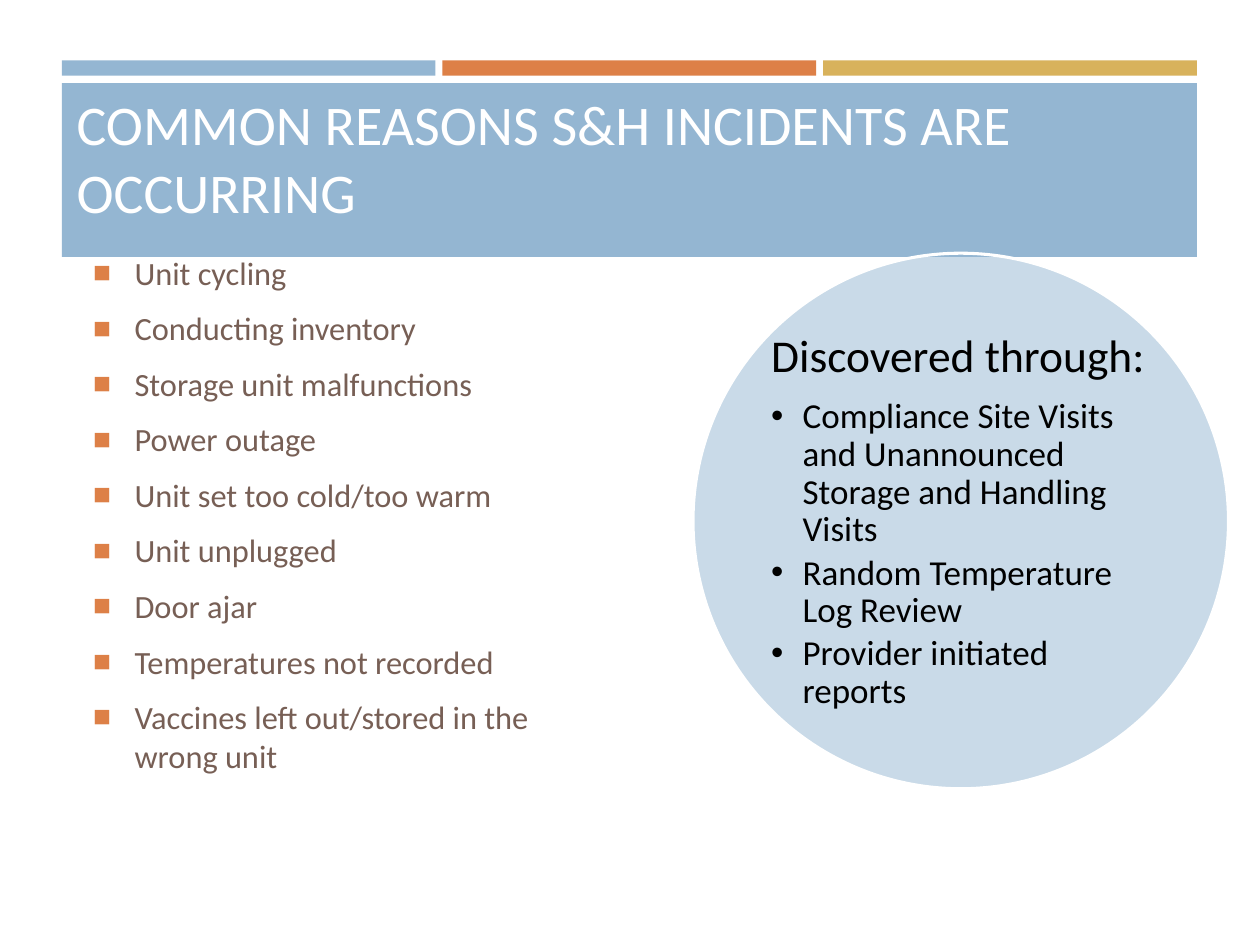
from dataclasses import dataclass

from lxml import etree
from pptx import Presentation
from pptx.dml.color import RGBColor
from pptx.enum.shapes import MSO_SHAPE
from pptx.enum.text import MSO_ANCHOR, PP_ALIGN
from pptx.oxml.ns import qn
from pptx.util import Inches, Pt

RECTANGLE = MSO_SHAPE.RECTANGLE
OVAL = MSO_SHAPE.OVAL
MIDDLE = MSO_ANCHOR.MIDDLE
BOTTOM = MSO_ANCHOR.BOTTOM
LEFT = PP_ALIGN.LEFT


@dataclass(frozen=True)
class Theme:
    font: str = "Calibri"
    bullet_font: str = "Arial"
    blue: str = "94B6D2"
    orange: str = "DD8047"
    gold: str = "D8B25C"
    brown: str = "775F55"
    white: str = "FFFFFF"
    black: str = "000000"
    title_size: float = 32
    reason_size: float = 18.5
    heading_size: float = 26
    source_size: float = 20


theme = Theme()
presentation = Presentation()
presentation.slide_width = Inches(10)
presentation.slide_height = Inches(7.5)
column = presentation.slide_width / 100
row = presentation.slide_height / 100
slide = presentation.slides.add_slide(presentation.slide_layouts[6])


def add_panel(kind, left, top, width, height, color):
    shape = slide.shapes.add_shape(
        kind, int(left * column), int(top * row), int(width * column), int(height * row)
    )
    shape.shadow.inherit = False
    shape.fill.solid()
    shape.fill.fore_color.rgb = RGBColor.from_string(color)
    shape.line.fill.background()
    return shape


def write(text, box, size, color, anchor=MIDDLE, insets=(0.1, 0.05, 0.1, 0.05), bullet=None,
          bullet_color=None, bullet_share=100, indent=0, before=0, after=0, spacing=1.0, frame=None):
    if frame is None:
        left, top, width, height = box
        frame = slide.shapes.add_textbox(
            int(left * column), int(top * row), int(width * column), int(height * row)
        ).text_frame
        frame.word_wrap = True
        frame.vertical_anchor = anchor
        frame.margin_left, frame.margin_top, frame.margin_right, frame.margin_bottom = map(Inches, insets)
        paragraph = frame.paragraphs[0]
        before = 0
    else:
        paragraph = frame.add_paragraph()
    if bullet:
        properties = paragraph._p.get_or_add_pPr()
        properties.set("marL", str(Inches(indent)))
        properties.set("indent", str(-Inches(indent)))
        tint = etree.SubElement(properties, qn("a:buClr"))
        etree.SubElement(tint, qn("a:srgbClr"), val=bullet_color or color)
        etree.SubElement(properties, qn("a:buSzPct"), val=str(bullet_share * 1000))
        etree.SubElement(properties, qn("a:buFont"), typeface=theme.bullet_font)
        etree.SubElement(properties, qn("a:buChar"), char=bullet)
    paragraph.alignment = LEFT
    paragraph.line_spacing = spacing
    paragraph.space_before = Pt(before)
    paragraph.space_after = Pt(after)
    run = paragraph.add_run()
    run.text = text
    run.font.name = theme.font
    run.font.size = Pt(size)
    run.font.color.rgb = RGBColor.from_string(color)
    return frame


band_left, band_width, bar_gap = 4.9, 90.1, 0.55
bar_width = (band_width - 2 * bar_gap) / 3
for index, color in enumerate((theme.blue, theme.orange, theme.gold)):
    add_panel(RECTANGLE, band_left + index * (bar_width + bar_gap), 6.4, bar_width, 1.6, color)
add_panel(RECTANGLE, band_left, 8.8, band_width, 18.4, theme.blue)

write("COMMON REASONS S&H INCIDENTS ARE OCCURRING", (5.1, 10, 90, 14.4),
      theme.title_size, theme.white, anchor=BOTTOM)

reasons = (
    "Unit cycling",
    "Conducting inventory",
    "Storage unit malfunctions",
    "Power outage",
    "Unit set too cold/too warm",
    "Unit unplugged",
    "Door ajar",
    "Temperatures not recorded",
    "Vaccines left out/stored in the wrong unit",
)
reason_frame = None
for reason in reasons:
    reason_frame = write(reason, (6.4, 32.53, 42.6, 52.93), theme.reason_size, theme.brown,
                         insets=(0.1, 0.05, 0.1, 0.74), bullet="■", bullet_color=theme.orange,
                         bullet_share=92, indent=0.33, before=3.5, after=6, frame=reason_frame)

circle = add_panel(OVAL, 55, 26.8, 42.5, 56.67, theme.blue)
circle.line.color.rgb = RGBColor.from_string(theme.white)
circle.line.width = Pt(1.75)
circle_color = circle.fill._xPr.find(qn("a:solidFill"))[0]
etree.SubElement(circle_color, qn("a:alpha"), val="50000")

source_box = (61.2, 35.2, 30.1, 40.13)
source_frame = write("Discovered through:", source_box, theme.heading_size, theme.black,
                     insets=(0, 0, 0, 0), spacing=0.9, after=9)
sources = (
    "Compliance Site Visits and Unannounced Storage and Handling Visits",
    "Random Temperature Log Review",
    "Provider initiated reports",
)
for source in sources:
    write(source, source_box, theme.source_size, theme.black, bullet="•", indent=0.25,
          spacing=0.9, after=3, frame=source_frame)

presentation.save("out.pptx")
